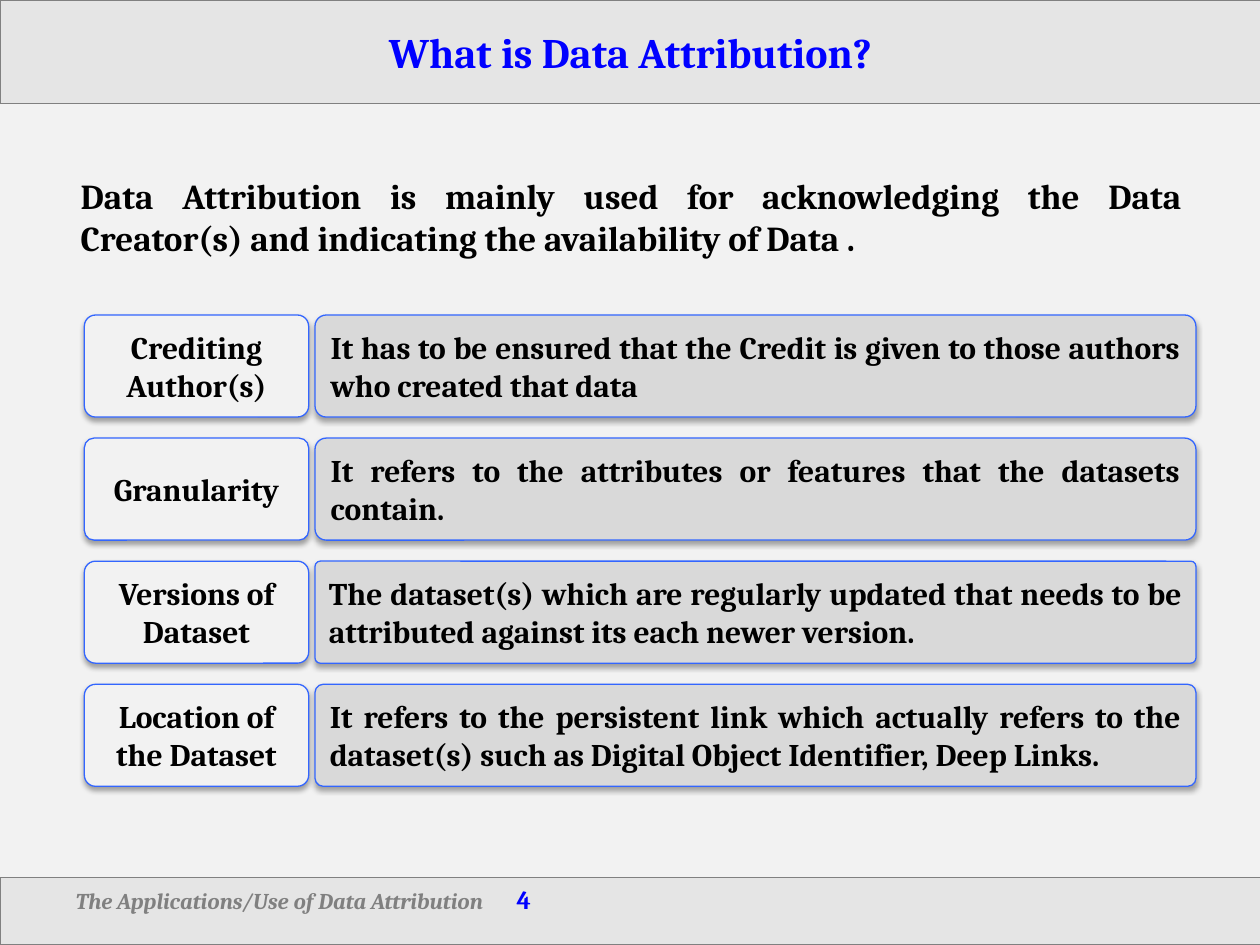
from dataclasses import dataclass

from lxml import etree
from pptx import Presentation
from pptx.dml.color import RGBColor
from pptx.enum import shapes, text
from pptx.oxml.ns import qn
from pptx.util import Pt


@dataclass(frozen=True)
class Theme:
    font: str = "Cambria"
    page: str = "F2F2F2"
    panel: str = "D9D9D9"
    grey: str = "808080"
    border: str = "3366FF"
    accent: str = "0000FF"
    ink: str = "000000"
    title: float = 24
    intro: float = 20
    card: float = 18
    footer: float = 12.9
    number: float = 14.8


T = Theme()
ALIGN = text.PP_ALIGN
ANCHOR = text.MSO_ANCHOR

# label, label corner, description, description corner
ROWS = [
    ("Crediting Author(s)", 0.11,
     "It has to be ensured that the Credit is given to those authors who created that data", 0.11),
    ("Granularity", 0.095,
     "It refers to the attributes or features that the datasets contain.", 0.11),
    ("Versions of Dataset", 0.11,
     "The dataset(s) which are regularly updated that needs to be attributed against its each newer version.", 0.052),
    ("Location of the Dataset", 0.11,
     "It refers to the persistent link which actually refers to the dataset(s) such as Digital Object Identifier, Deep Links.", 0.081),
]


def add_text(p, words, size, color=T.ink, italic=False, align=None):
    r = p.add_run()
    r.text = words
    f = r.font
    f.name, f.size, f.bold, f.italic = T.font, Pt(size), True, italic
    f.color.rgb = RGBColor.from_string(color)
    if align is not None:
        p.alignment = align


def place(sp, box):
    sp.left, sp.top, sp.width, sp.height = (Pt(v) for v in box)


def paint(sp, fill, line=None, alpha=None):
    sp.fill.solid()
    sp.fill.fore_color.rgb = RGBColor.from_string(fill)
    if alpha is not None:
        color = sp._element.spPr.find(qn("a:solidFill"))[0]
        etree.SubElement(color, qn("a:alpha"), val=str(alpha * 1000))
    if line:
        sp.line.color.rgb = RGBColor.from_string(line)
        sp.line.width = Pt(0.75)


def set_frame(sp, anchor):
    tf = sp.text_frame
    tf.word_wrap = True
    tf.auto_size = text.MSO_AUTO_SIZE.NONE
    tf.vertical_anchor = anchor
    return tf


def add_shadow(sp):
    sp.shadow.inherit = False
    effects = sp._element.spPr.find(qn("a:effectLst"))
    shadow = etree.SubElement(effects, qn("a:outerShdw"), blurRad=str(Pt(3.1)),
                              dist=str(Pt(1.8)), dir="5400000", rotWithShape="0")
    color = etree.SubElement(shadow, qn("a:srgbClr"), val=T.ink)
    etree.SubElement(color, qn("a:alpha"), val="35000")


def title_band(sp, box):
    place(sp, box)
    paint(sp, T.panel, T.grey, alpha=50)
    tf = set_frame(sp, ANCHOR.MIDDLE)
    add_text(tf.paragraphs[0], "What is Data Attribution?", T.title, T.accent, align=ALIGN.CENTER)


def footer_band(sp, box):
    """Footer text at the left and the page number on a right tab stop."""
    place(sp, box)
    paint(sp, T.panel, T.grey, alpha=50)
    tf = set_frame(sp, ANCHOR.TOP)
    tf.margin_left = Pt(43.2)
    p = tf.paragraphs[0]
    p.space_before = Pt(0)
    tabs = etree.SubElement(p._p.get_or_add_pPr(), qn("a:tabLst"))
    etree.SubElement(tabs, qn("a:tab"), pos=str(Pt(box[2] - 65)), algn="r")
    add_text(p, "The Applications/Use of Data Attribution\t", T.footer, T.grey,
             italic=True, align=ALIGN.LEFT)
    add_text(p, "4", T.number, T.accent)


def intro(slide, box):
    sp = slide.shapes.add_textbox(*(Pt(v) for v in box))
    paint(sp, T.page, alpha=50)
    tf = set_frame(sp, ANCHOR.MIDDLE)
    add_text(tf.paragraphs[0],
             "Data Attribution is mainly used for acknowledging the Data Creator(s) "
             "and indicating the availability of Data .", T.intro, align=ALIGN.JUSTIFY)


def card(slide, box, words, fill, corner, align):
    sp = slide.shapes.add_shape(shapes.MSO_SHAPE.ROUNDED_RECTANGLE, *(Pt(v) for v in box))
    sp.adjustments[0] = corner
    paint(sp, fill, T.border)
    add_shadow(sp)
    tf = set_frame(sp, ANCHOR.MIDDLE)
    add_text(tf.paragraphs[0], words, T.card, align=align)


def card_rows(slide, box, label_width=128.2, gap=3.6, row_height=58.3):
    left, top, width, height = box
    pitch = (height - row_height) / (len(ROWS) - 1)
    offset = label_width + gap
    for i, (label, label_corner, words, corner) in enumerate(ROWS):
        y = top + i * pitch
        card(slide, (left, y, label_width, row_height), label, T.page, label_corner, ALIGN.CENTER)
        card(slide, (left + offset, y, width - offset, row_height), words, T.panel, corner,
             ALIGN.JUSTIFY)


def main():
    prs = Presentation()
    prs.slide_width, prs.slide_height = Pt(720), Pt(540)
    slide = prs.slides.add_slide(prs.slide_layouts[0])
    slide.background.fill.solid()
    slide.background.fill.fore_color.rgb = RGBColor.from_string(T.page)
    title_band(slide.shapes.title, (0, 0, 720.5, 59))
    footer_band(slide.placeholders[1], (0, 501.6, 720.5, 38.4))
    intro(slide, (39, 90.7, 643.5, 65.5))
    card_rows(slide, (48.2, 180, 635.2, 269.3))
    prs.save("out.pptx")


if __name__ == "__main__":
    main()
